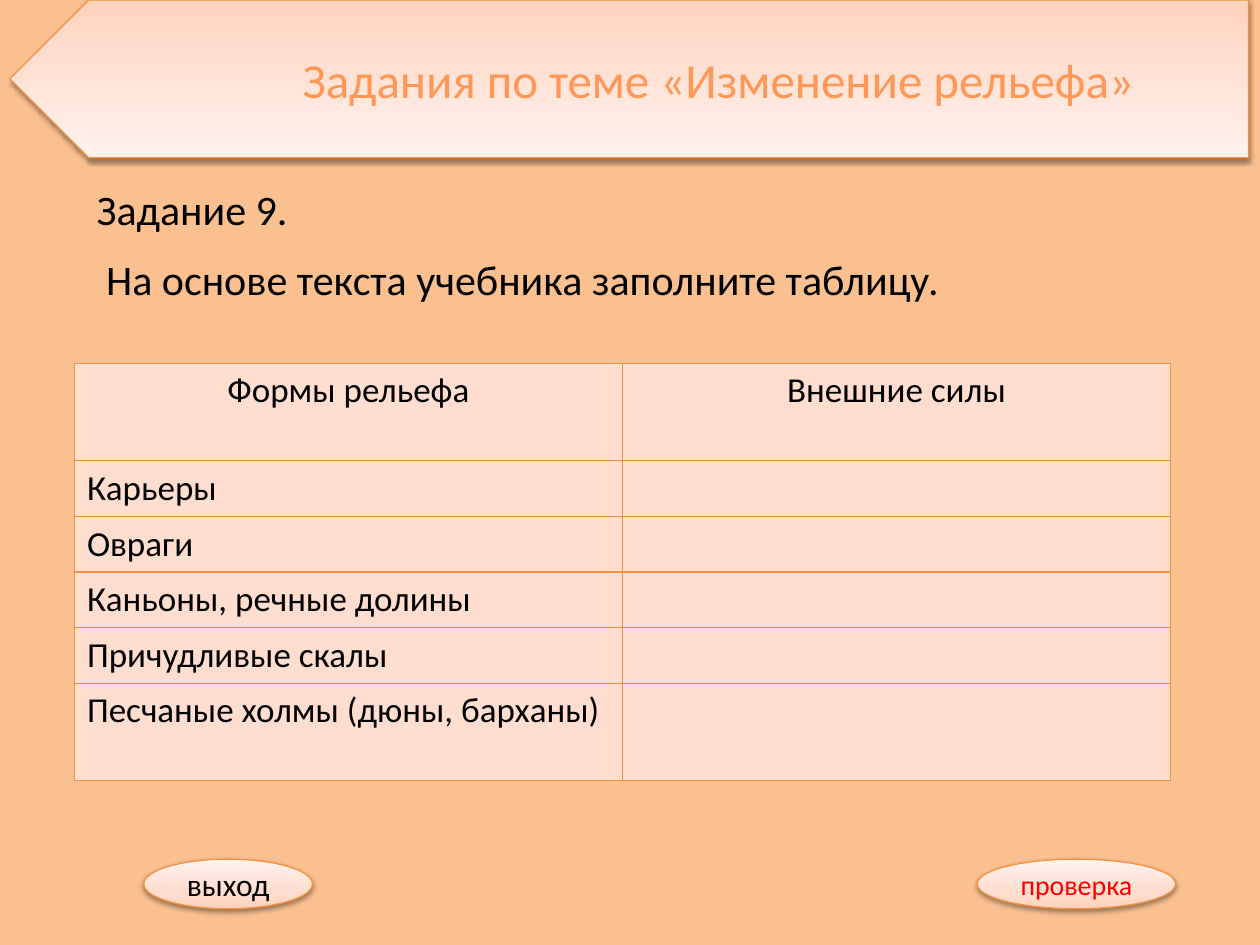
"""Builds a geography task slide with a table to fill in and two buttons."""
import lxml.etree
import pptx
import pptx.dml.color
import pptx.enum.shapes
import pptx.enum.text
import pptx.oxml
import pptx.oxml.ns
import pptx.util

Cm = pptx.util.Cm
Pt = pptx.util.Pt
qn = pptx.oxml.ns.qn
SHAPE = pptx.enum.shapes.MSO_SHAPE
ALIGN = pptx.enum.text.PP_ALIGN
ANCHOR = pptx.enum.text.MSO_ANCHOR


def rgb(value):
    return pptx.dml.color.RGBColor.from_string(value)


def add_xml(parent, tag, **attrs):
    return lxml.etree.SubElement(parent, qn(tag), attrs)


class SlideBuilder:
    font = "Calibri"
    black = "000000"
    background = "FAC090"
    accent = "F69240"
    cell_fill = "FFDED0"
    stops = [(0, "FFD2BD"), (35, "FFDED0"), (100, "FFF2ED")]
    line_width = Pt(0.75)

    def __init__(self, prs):
        self.slide = prs.slides.add_slide(prs.slide_layouts[6])
        fill = self.slide.background.fill
        fill.solid()
        fill.fore_color.rgb = rgb(self.background)

    def run(self, p, text, size, color=black, align=ALIGN.LEFT):
        p.alignment = align
        r = p.add_run()
        r.text = text
        r.font.name = self.font
        r.font.size = Pt(size)
        r.font.color.rgb = rgb(color)

    def shape(self, kind, left, top, width, height):
        sp = self.slide.shapes.add_shape(kind, Cm(left), Cm(top), Cm(width), Cm(height))
        sp.fill.gradient()
        sp.fill.gradient_angle = 90
        gs_list = sp._element.spPr.find(".//" + qn("a:gsLst"))
        for gs in list(gs_list):
            gs_list.remove(gs)
        for pos, color in self.stops:
            gs = add_xml(gs_list, "a:gs", pos=str(pos * 1000))
            add_xml(gs, "a:srgbClr", val=color)
        sp.line.color.rgb = rgb(self.accent)
        sp.line.width = self.line_width
        self.shadow(sp)
        return sp

    def shadow(self, sp):
        sp.shadow.inherit = False
        effects = sp._element.spPr.find(qn("a:effectLst"))
        outer = add_xml(effects, "a:outerShdw", blurRad=str(Pt(3.1)), dist=str(Pt(1.6)),
                        dir="5400000", rotWithShape="0")
        add_xml(add_xml(outer, "a:srgbClr", val=self.black), "a:alpha", val="38000")

    def button(self, text, left, width, size, color=black):
        sp = self.shape(SHAPE.OVAL, left, 17.32, width, 1)
        tf = sp.text_frame
        tf.vertical_anchor = ANCHOR.MIDDLE
        tf.word_wrap = False
        self.run(tf.paragraphs[0], text, size, color, ALIGN.CENTER)

    def text(self, lines, left, top, width, height, size, color=black,
             align=ALIGN.LEFT, anchor=ANCHOR.TOP, gap=0):
        tf = self.slide.shapes.add_textbox(Cm(left), Cm(top), Cm(width), Cm(height)).text_frame
        tf.word_wrap = True
        tf.vertical_anchor = anchor
        for i, line in enumerate(lines):
            p = tf.add_paragraph() if i else tf.paragraphs[0]
            if i:
                p.space_before = Pt(gap)
            self.run(p, line, size, color, align)
        return tf

    def border(self, cell):
        tc_pr = cell._tc.get_or_add_tcPr()
        for i, side in enumerate(("a:lnL", "a:lnR", "a:lnT", "a:lnB")):
            ln = add_xml(tc_pr, side, w=str(self.line_width))
            add_xml(add_xml(ln, "a:solidFill"), "a:srgbClr", val=self.accent)
            tc_pr.insert(i, ln)

    def table(self, rows, heights, left, top, col_width, size):
        cols = len(rows[0])
        table = self.slide.shapes.add_table(
            len(rows), cols, Cm(left), Cm(top), Cm(col_width * cols), Cm(sum(heights))).table
        for col in table.columns:
            col.width = Cm(col_width)
        for i, (row, height) in enumerate(zip(rows, heights)):
            table.rows[i].height = Cm(height)
            for j, text in enumerate(row):
                cell = table.cell(i, j)
                cell.fill.solid()
                cell.fill.fore_color.rgb = rgb(self.cell_fill)
                self.border(cell)
                p = cell.text_frame.paragraphs[0]
                if text:
                    self.run(p, text, size, align=ALIGN.LEFT if i else ALIGN.CENTER)
                else:
                    p.font.size = Pt(size)


def main():
    prs = pptx.Presentation()
    prs.slide_width, prs.slide_height = Cm(25.4), Cm(19.05)
    s = SlideBuilder(prs)

    landforms = ["Карьеры", "Овраги", "Каньоны, речные долины", "Причудливые скалы",
                 "Песчаные холмы (дюны, барханы)"]
    rows = [("Формы рельефа", "Внешние силы")] + [(name, "") for name in landforms]
    s.table(rows, [1.97] + [1.12] * 4 + [1.97], 1.5, 7.32, 11.05, 20)

    s.button("выход", 2.9, 3.4, 18)
    banner = s.shape(SHAPE.PENTAGON, 0.2, 0, 24.97, 3.18)
    banner.rotation = 180
    title = s.text(["Задания по теме «Изменение рельефа»"], 1.02, 0, 24.18, 3.18, 28,
                   "FF9856", ALIGN.CENTER, ANCHOR.MIDDLE)
    title.margin_left, title.margin_right = Cm(3.38), Cm(0.64)
    s.text(["Задание 9.", " На основе текста учебника заполните таблицу."],
           1.7, 3.58, 21, 2.82, 24, gap=11)
    s.button("проверка", 19.7, 4, 16, "FF0000")

    prs.save("out.pptx")


if __name__ == "__main__":
    main()
